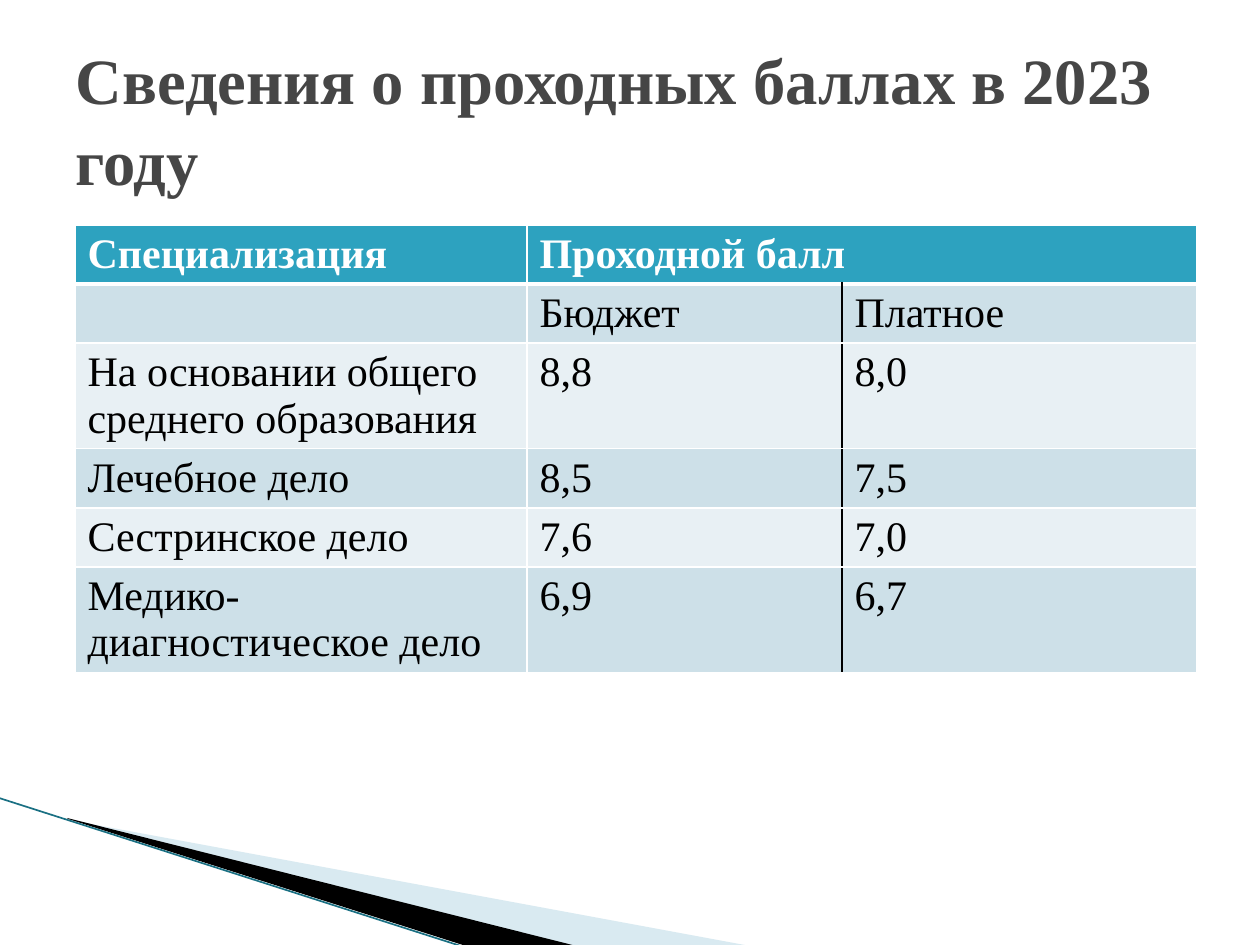
import pptx
import pptx.dml.color
import pptx.enum.shapes
import pptx.enum.text
import pptx.oxml
import pptx.oxml.ns
import pptx.util
from dataclasses import dataclass
from lxml import etree

PIXEL = 914400 / 126


@dataclass(frozen=True)
class Theme:
    font: str = "Times New Roman"
    title_size: float = 36.9
    table_size: float = 24
    title: str = "464646"
    text: str = "000000"
    light: str = "FFFFFF"
    header: str = "2DA2BF"
    bands: tuple = ("CDE0E8", "E8F0F4")
    pale_wedge: str = "A0CBDC"
    edge: str = "1A7083"


THEME = Theme()
ROWS = [
    ("Специализация", "Проходной балл", ""),
    ("", "Бюджет", "Платное"),
    ("На основании общего среднего образования", "8,8", "8,0"),
    ("Лечебное дело", "8,5", "7,5"),
    ("Сестринское дело", "7,6", "7,0"),
    ("Медико-диагностическое дело", "6,9", "6,7"),
]
COLUMN_WIDTHS = (452, 315, 355)
ROW_HEIGHTS = (58, 58, 104, 58, 58, 104)


def px(value):
    return pptx.util.Emu(round(value * PIXEL))


def rgb(color):
    return pptx.dml.color.RGBColor.from_string(color)


def add_run(paragraph, text, size, color, bold=False):
    run = paragraph.add_run()
    run.text = text
    run.font.name = THEME.font
    run.font.size = pptx.util.Pt(size)
    run.font.bold = bold
    run.font.color.rgb = rgb(color)


def add_title(slide, left, top, width, height):
    title = slide.shapes.title
    title.left, title.top, title.width, title.height = map(px, (left, top, width, height))
    frame = title.text_frame
    frame.word_wrap = True
    frame.auto_size = pptx.enum.text.MSO_AUTO_SIZE.NONE
    frame.vertical_anchor = pptx.enum.text.MSO_ANCHOR.MIDDLE
    paragraph = frame.paragraphs[0]
    paragraph.alignment = pptx.enum.text.PP_ALIGN.LEFT
    paragraph.line_spacing = 1.05
    add_run(paragraph, "Сведения о проходных баллах в 2023 году",
            THEME.title_size, THEME.title, bold=True)


def add_wedge(slide, left, top, points, color, opacity=100):
    corners = [(left + x, top + y) for x, y in points]
    builder = slide.shapes.build_freeform(*corners[0], scale=PIXEL)
    builder.add_line_segments(corners[1:], close=True)
    shape = builder.convert_to_shape()
    shape.shadow.inherit = False
    shape.fill.solid()
    shape.fill.fore_color.rgb = rgb(color)
    shape.line.fill.background()
    if opacity < 100:
        fill_color = shape.fill._xPr.find(".//" + pptx.oxml.ns.qn("a:srgbClr"))
        etree.SubElement(fill_color, pptx.oxml.ns.qn("a:alpha"), val=str(opacity * 1000))


def add_corner(slide, left, top, width, height):
    add_wedge(slide, left + 70, top + 21, [(0, 1), (681, 127), (505, 127), (0, 0)],
              THEME.pale_wedge, opacity=40)
    add_wedge(slide, left + 68, top + 20, [(0, 0), (509, 128), (402, 129), (1, 1)], THEME.text)
    line = slide.shapes.add_connector(
        pptx.enum.shapes.MSO_CONNECTOR.STRAIGHT,
        px(left), px(top), px(left + width), px(top + height))
    line.line.color.rgb = rgb(THEME.edge)
    line.line.width = pptx.util.Pt(0.95)
    etree.SubElement(line._element.spPr, pptx.oxml.ns.qn("a:effectLst"))


def set_border(cell, side, color, width=1):
    border = etree.SubElement(cell._tc.get_or_add_tcPr(), pptx.oxml.ns.qn("a:ln" + side),
                              w=str(pptx.util.Pt(width)))
    fill = etree.SubElement(border, pptx.oxml.ns.qn("a:solidFill"))
    etree.SubElement(fill, pptx.oxml.ns.qn("a:srgbClr"), val=color)


def format_cell(cell, row, column, text):
    is_header = row == 0
    colors = dict.fromkeys("LRTB", THEME.light)
    if not is_header and column > 0:
        colors["R" if column == 1 else "L"] = THEME.text
    for side, color in colors.items():
        header_edge = (row, side) in ((0, "B"), (1, "T"))
        set_border(cell, side, color, 3 if header_edge else 1)
    cell.fill.solid()
    cell.fill.fore_color.rgb = rgb(THEME.header if is_header else THEME.bands[(row - 1) % 2])
    if text:
        add_run(cell.text_frame.paragraphs[0], text, THEME.table_size,
                THEME.light if is_header else THEME.text, bold=is_header)


def add_score_table(slide, left, top):
    table = slide.shapes.add_table(
        len(ROWS), len(COLUMN_WIDTHS), px(left), px(top),
        px(sum(COLUMN_WIDTHS)), px(sum(ROW_HEIGHTS))).table
    for column, width in zip(table.columns, COLUMN_WIDTHS):
        column.width = px(width)
    for row, height in zip(table.rows, ROW_HEIGHTS):
        row.height = px(height)
    table.cell(0, 1).merge(table.cell(0, 2))
    for row, texts in enumerate(ROWS):
        for column, text in enumerate(texts):
            format_cell(table.cell(row, column), row, column, text)


def main():
    presentation = pptx.Presentation()
    presentation.slide_width = px(1260)
    presentation.slide_height = px(945)
    slide = presentation.slides.add_slide(presentation.slide_layouts[5])
    slide.background.fill.solid()
    slide.background.fill.fore_color.rgb = rgb(THEME.light)
    add_corner(slide, -1, 798, 468, 150)
    add_score_table(slide, 75, 225)
    add_title(slide, 63, 38, 1134, 158)
    presentation.save("out.pptx")


if __name__ == "__main__":
    main()
